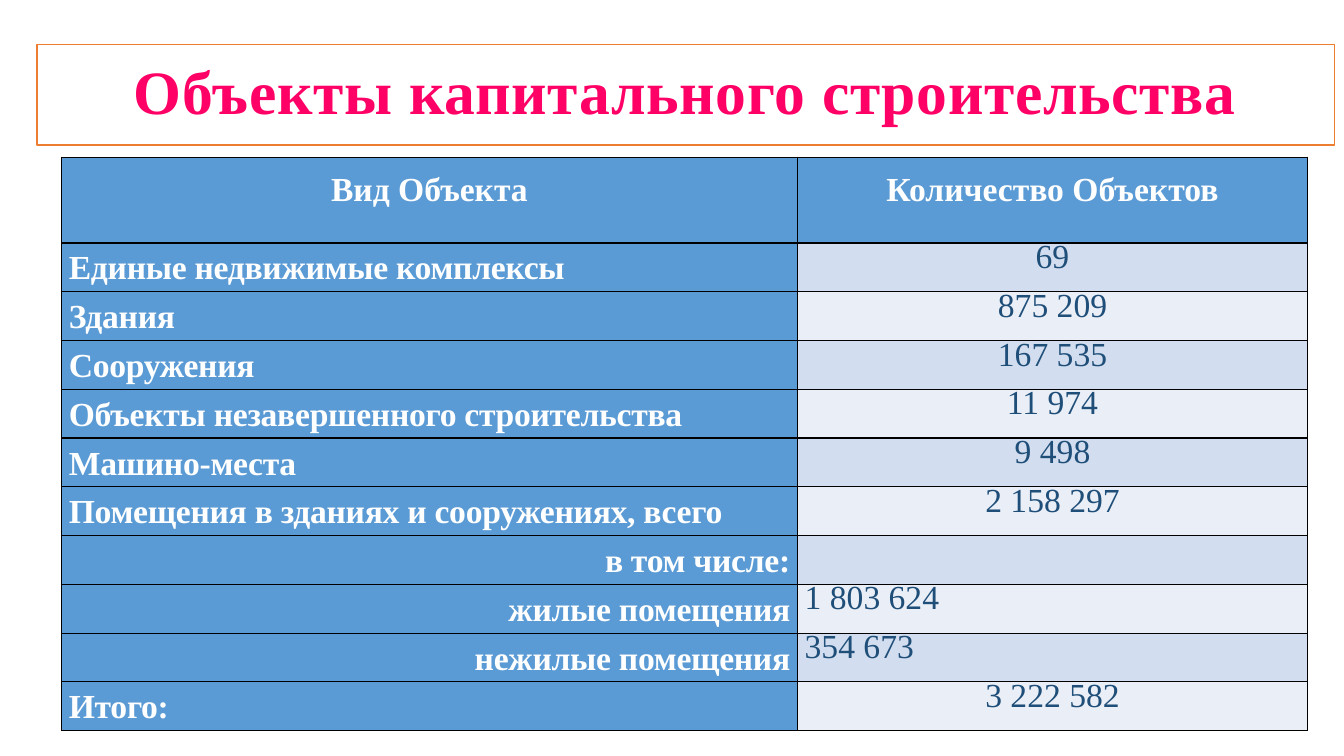
from lxml import etree
from pptx import Presentation
from pptx.dml.color import RGBColor
from pptx.enum import text as t
from pptx.oxml import parse_xml
from pptx.oxml.ns import nsdecls, qn
from pptx.util import Pt

FONT = "Times New Roman"
WHITE = RGBColor(0xFF, 0xFF, 0xFF)
BLACK = RGBColor(0x00, 0x00, 0x00)
PINK = RGBColor(0xFF, 0x00, 0x66)
ORANGE = RGBColor(0xED, 0x7D, 0x31)
BLUE = RGBColor(0x5B, 0x9B, 0xD5)
NAVY = RGBColor(0x1F, 0x4E, 0x79)
BANDS = [RGBColor(0xD2, 0xDE, 0xEF), RGBColor(0xEA, 0xEF, 0xF7)]

LEFT, CENTER, RIGHT = t.PP_ALIGN.LEFT, t.PP_ALIGN.CENTER, t.PP_ALIGN.RIGHT
HEADER = ["Вид Объекта", "Количество Объектов"]
OBJECTS = [  # kind, its alignment, count, its alignment
    ("Единые недвижимые комплексы", LEFT, "69", CENTER),
    ("Здания", LEFT, "875 209", CENTER),
    ("Сооружения", LEFT, "167 535", CENTER),
    ("Объекты незавершенного строительства", LEFT, "11 974", CENTER),
    ("Машино-места", LEFT, "9 498", CENTER),
    ("Помещения в зданиях и сооружениях, всего", LEFT, "2 158 297", CENTER),
    ("в том числе:", RIGHT, "", LEFT),
    ("жилые помещения", RIGHT, "1 803 624", LEFT),
    ("нежилые помещения", RIGHT, "354 673", LEFT),
    ("Итого:", LEFT, "3 222 582", CENTER),
]


def line_xml(tag, width, color):
    return parse_xml(
        f'<a:{tag} {nsdecls("a")} w="{Pt(width)}"><a:solidFill>'
        f'<a:srgbClr val="{color}"/></a:solidFill></a:{tag}>')


def add_text(paragraph, words, size, color, bold, tracking=0):
    """Add one run; tracking is letter spacing in points."""
    run = paragraph.add_run()
    run.text = words
    font = run.font
    font.name, font.size, font.bold = FONT, Pt(size), bold
    font.color.rgb = color
    properties = run._r.get_or_add_rPr()
    if tracking:
        properties.set("spc", str(round(tracking * 100)))
    return properties


def add_heading(slide, left, top, width, height):
    heading = slide.shapes.title
    heading.left, heading.top = Pt(left), Pt(top)
    heading.width, heading.height = Pt(width), Pt(height)
    heading.fill.solid()
    heading.fill.fore_color.rgb = WHITE
    heading.line.color.rgb = ORANGE
    heading.line.width = Pt(1)
    frame = heading.text_frame
    frame.word_wrap = True
    frame.auto_size = t.MSO_AUTO_SIZE.NONE
    frame.vertical_anchor = t.MSO_ANCHOR.MIDDLE
    paragraph = frame.paragraphs[0]
    paragraph.alignment = CENTER
    paragraph.line_spacing = 0.9
    properties = add_text(paragraph, "Объекты капитального строительства",
                          44, PINK, True, 0.5)
    properties.insert(0, line_xml("ln", 0.75, BLUE))
    effects = etree.Element(qn("a:effectLst"))
    shadow = etree.SubElement(effects, qn("a:outerShdw"), blurRad=str(Pt(3)),
                              dist=str(Pt(3)), dir="2700000", algn="tl")
    tint = etree.SubElement(shadow, qn("a:srgbClr"), val=str(BLUE))
    etree.SubElement(tint, qn("a:alpha"), val="60000")
    properties.find(qn("a:solidFill")).addnext(effects)


def fill_cell(cell, words, fill, color, bold, alignment, spacing, tracking=0):
    cell.margin_left = cell.margin_right = Pt(5.2)
    cell.margin_top = cell.margin_bottom = Pt(0)
    cell.vertical_anchor = t.MSO_ANCHOR.MIDDLE
    cell.fill.solid()
    cell.fill.fore_color.rgb = fill
    for position, side in enumerate(["lnL", "lnR", "lnT", "lnB"]):
        cell._tc.get_or_add_tcPr().insert(position, line_xml(side, 1, BLACK))
    paragraph = cell.text_frame.paragraphs[0]
    paragraph.alignment = alignment
    paragraph.line_spacing = spacing
    if words:
        add_text(paragraph, words, 24, color, bold, tracking)


def add_objects_table(slide, left, top, width, height):
    header_height, kind_width = 61.2, 525.6
    table = slide.shapes.add_table(len(OBJECTS) + 1, 2, Pt(left), Pt(top),
                                   Pt(width), Pt(height)).table
    table.columns[0].width = Pt(kind_width)
    table.columns[1].width = Pt(width - kind_width)
    table.rows[0].height = Pt(header_height)
    for column, words in enumerate(HEADER):
        fill_cell(table.cell(0, column), words, BLUE, WHITE, True, CENTER, Pt(12))
    for row, (kind, kind_side, count, count_side) in enumerate(OBJECTS, 1):
        table.rows[row].height = Pt((height - header_height) / len(OBJECTS))
        fill_cell(table.cell(row, 0), kind, BLUE, WHITE, True, kind_side, 1.07, -0.2)
        fill_cell(table.cell(row, 1), count, BANDS[(row - 1) % 2], NAVY, False,
                  count_side, Pt(12))


def main():
    deck = Presentation()
    deck.slide_width, deck.slide_height = Pt(960), Pt(540)
    slide = deck.slides.add_slide(deck.slide_layouts[5])
    add_heading(slide, 26.5, 31.7, 926.6, 72)
    add_objects_table(slide, 44, 112.3, 890, 409.7)
    deck.save("out.pptx")


if __name__ == "__main__":
    main()
